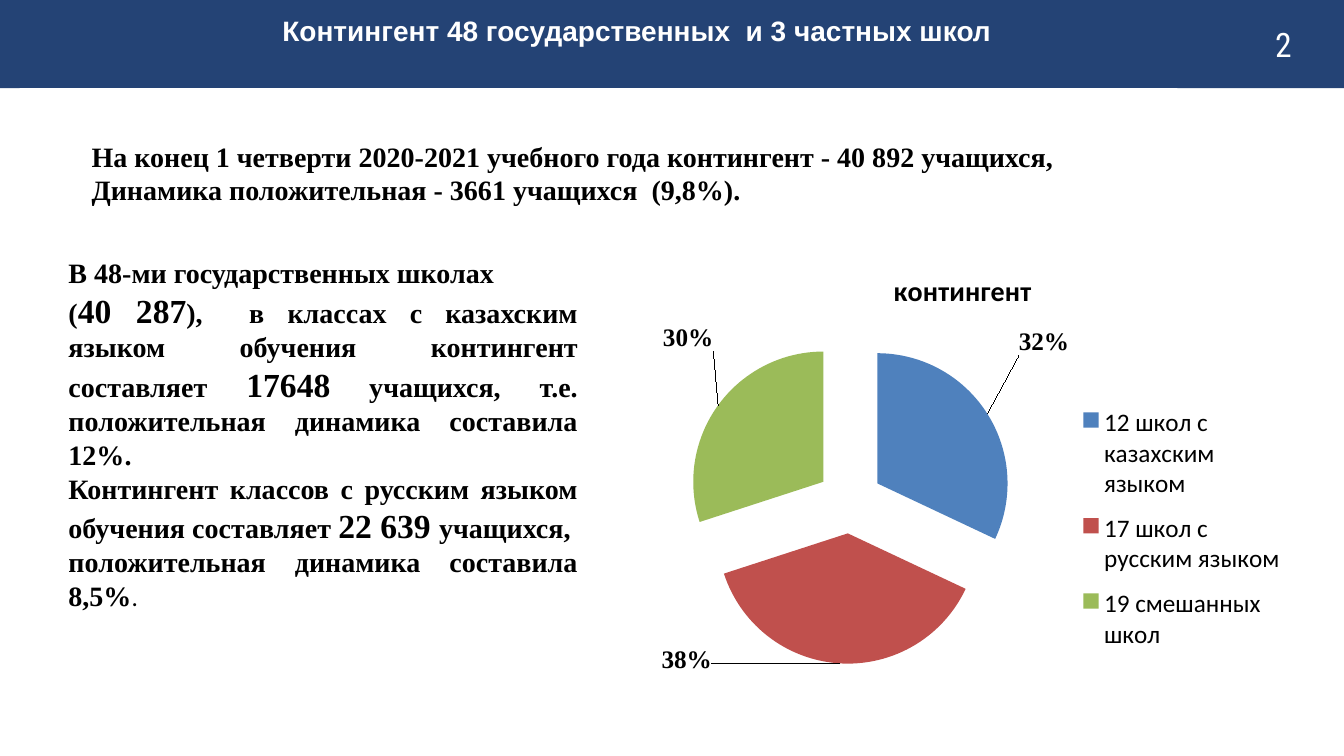
from lxml.etree import SubElement
from pptx import Presentation
from pptx.chart.data import CategoryChartData
from pptx.dml.color import RGBColor
from pptx.enum.chart import XL_CHART_TYPE, XL_LABEL_POSITION, XL_LEGEND_POSITION
from pptx.enum.text import MSO_ANCHOR, MSO_AUTO_SIZE, PP_ALIGN
from pptx.oxml import parse_xml
from pptx.oxml.ns import nsdecls, qn
from pptx.util import Pt

COLORS = {"band": "244375", "white": "FFFFFF", "black": "000000",
          "kazakh": "4F81BD", "russian": "C0504D", "mixed": "9BBB59"}
SERIF = "Times New Roman"


def color(name):
    """Return the named palette colour."""
    return RGBColor.from_string(COLORS[name])


def set_font(font, name, size, color_name, bold=False):
    """Apply typeface, size, colour and weight to a font."""
    font.name, font.size, font.bold = name, Pt(size), bold
    font.color.rgb = color(color_name)


def place(shape, box):
    """Move a shape to a box given in points."""
    shape.left, shape.top, shape.width, shape.height = map(Pt, box)


def add_outline(slide, points):
    """Draw a closed band-coloured outline."""
    builder = slide.shapes.build_freeform(*points[0], scale=Pt(1))
    builder.add_line_segments(points[1:], close=True)
    shape = builder.convert_to_shape()
    shape.shadow.inherit = False
    shape.fill.solid()
    shape.fill.fore_color.rgb = color("band")
    shape.line.fill.background()


def add_text(slide, box):
    """Add a wrapping text box and return its frame."""
    frame = slide.shapes.add_textbox(*map(Pt, box)).text_frame
    frame.word_wrap = True
    return frame


def add_header(slide, box, title_text, number):
    """Build the band with its side panels, title and slide number."""
    left, top, width, height = box
    right, bottom = left + width, top + height
    add_outline(slide, [(left, top), (right, top), (right, bottom), (left, bottom)])
    add_outline(slide, [(left, top), (left + 119.5, top), (left + 90.7, bottom - 0.7), (left, bottom)])
    add_outline(slide, [(right - 90, top + 0.7), (right, top + 0.7), (right, bottom + 0.5),
                        (right - 119, bottom + 0.5)])

    frame = add_text(slide, (left + 910.8, top + 15.8, 14.4, 30.2))
    frame.margin_left = frame.margin_right = frame.margin_bottom = 0
    frame.margin_top = Pt(1)
    frame.word_wrap = False
    frame.text = number
    set_font(frame.paragraphs[0].font, "Roboto Condensed", 24, "white")

    title = slide.shapes.title
    place(title, (left + 12.2, top + 5.8, 885.6, 31.7))
    title.element.getparent().append(title.element)
    frame = title.text_frame
    frame.text = title_text
    frame.auto_size = MSO_AUTO_SIZE.NONE
    frame.vertical_anchor = MSO_ANCHOR.TOP
    paragraph = frame.paragraphs[0]
    paragraph.alignment = PP_ALIGN.CENTER
    set_font(paragraph.font, "Arial", 20, "white", True)


def add_summary(slide, box, lines):
    """Write the bold summary lines."""
    frame = add_text(slide, box)
    frame.text = "\n".join(lines)
    for paragraph in frame.paragraphs:
        set_font(paragraph.font, SERIF, 20, "black", True)


def add_details(slide, box, paragraphs):
    """Write justified paragraphs whose odd-numbered pieces are enlarged figures."""
    frame = add_text(slide, box)
    for index, pieces in enumerate(paragraphs):
        paragraph = frame.add_paragraph() if index else frame.paragraphs[0]
        paragraph.alignment = PP_ALIGN.JUSTIFY
        for position, piece in enumerate(pieces):
            run = paragraph.add_run()
            run.text = piece
            set_font(run.font, SERIF, 24 if position % 2 else 20, "black", True)
    full_stop = paragraph.add_run()
    full_stop.text = "."
    set_font(full_stop.font, "Calibri", 18, "black")


def manual_layout(inner=False, edge=True, **fractions):
    """Return a chart layout element for the given fractions."""
    layout = parse_xml(f"<c:layout {nsdecls('c')}><c:manualLayout/></c:layout>")
    settings = {"layoutTarget": "inner"} if inner else {}
    if edge:
        settings |= {"xMode": "edge", "yMode": "edge"}
    for tag, value in (settings | fractions).items():
        SubElement(layout[0], qn(f"c:{tag}")).set("val", str(value))
    return layout


def add_pie(slide, box, name, slices):
    """Build the exploded pie with title, legend and offset labels."""
    data = CategoryChartData(number_format="0%")
    data.categories = [label for label, *_ in slices]
    data.add_series(name, [value for _, value, *_ in slices])
    chart = slide.shapes.add_chart(XL_CHART_TYPE.PIE, *map(Pt, box), data).chart
    set_font(chart.font, "Calibri", 18, "black")

    chart.has_title = True
    chart.chart_title.text_frame.text = name
    set_font(chart.chart_title.text_frame.paragraphs[0].font, "Calibri", 20, "black", True)

    chart.has_legend = True
    legend = chart.legend
    legend.position = XL_LEGEND_POSITION.RIGHT
    legend.include_in_layout = False
    legend._element.find(qn("c:legendPos")).addnext(
        manual_layout(x=0.67, y=0.31, w=0.32, h=0.59))

    plot_area = chart._chartSpace.find(".//" + qn("c:plotArea"))
    for layout in plot_area.findall(qn("c:layout")):
        plot_area.remove(layout)
    plot_area.insert(0, manual_layout(inner=True, x=0.08, y=0.19, w=0.5, h=0.71))

    plot = chart.plots[0]
    plot.vary_by_categories = True
    series = plot.series[0]
    labels = series.data_labels
    labels.show_value = True
    labels.number_format, labels.number_format_is_linked = "0%", False
    labels.position = XL_LABEL_POSITION.OUTSIDE_END
    set_font(labels.font, SERIF, 18, "black", True)
    leader = labels._element.find(qn("c:showLeaderLines"))
    if leader is None:
        leader = SubElement(labels._element, qn("c:showLeaderLines"))
    leader.set("val", "1")

    for index, (_, _, fill, offset_x, offset_y) in enumerate(slices):
        point = series.points[index]
        point.format.fill.solid()
        point.format.fill.fore_color.rgb = color(fill)
        label = point.data_label
        label.position = XL_LABEL_POSITION.OUTSIDE_END
        set_font(label.font, SERIF, 18, "black", True)
        element = labels._element.findall(qn("c:dLbl"))[index]
        element.find(qn("c:idx")).addnext(manual_layout(edge=False, x=offset_x, y=offset_y))

    explosion = parse_xml(f'<c:explosion {nsdecls("c")} val="25"/>')
    series._element.find(qn("c:dPt")).addprevious(explosion)


def main():
    """Build and save the slide."""
    presentation = Presentation()
    presentation.slide_width, presentation.slide_height = Pt(960), Pt(540)
    slide = presentation.slides.add_slide(presentation.slide_layouts[5])
    add_header(slide, (0, 0, 960, 62.6), "Контингент 48 государственных  и 3 частных школ", "2")
    add_summary(slide, (58.3, 95.8, 792.7, 55.4), [
        "На конец 1 четверти 2020-2021 учебного года контингент - 40 892 учащихся,",
        "Динамика положительная - 3661 учащихся  (9,8%)."])
    add_details(slide, (41.8, 179.3, 378, 264.2), [
        ["В 48-ми государственных школах"],
        ["(", "40 287", "),  в классах с казахским языком обучения контингент составляет ",
         "17648", " учащихся, т.е. положительная динамика составила 12%."],
        ["Контингент классов с русским языком обучения составляет ", "22 639 ", "учащихся,"],
        ["положительная динамика составила 8,5%"]])
    add_pie(slide, (450.7, 179.3, 473.8, 327.6), "контингент", [
        ("12 школ с казахским языком", 0.32, "kazakh", 0.04, -0.12),
        ("17 школ с русским языком", 0.38, "russian", -0.23, -0.05),
        ("19 смешанных школ", 0.3, "mixed", 0, -0.11)])
    presentation.save("out.pptx")


if __name__ == "__main__":
    main()
